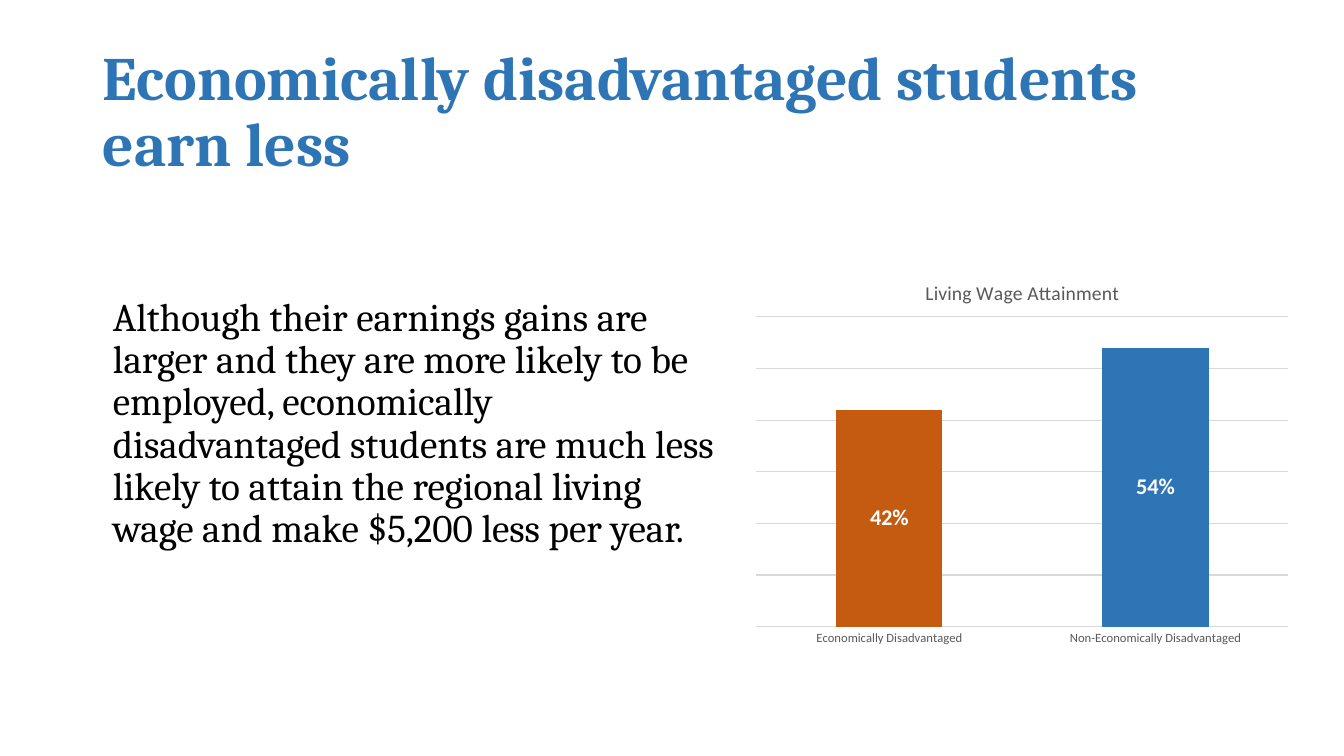
from dataclasses import dataclass
from typing import Any

from lxml import etree
from pptx import Presentation
from pptx.chart.data import CategoryChartData
from pptx.dml.color import RGBColor
from pptx.enum.chart import XL_CHART_TYPE, XL_LABEL_POSITION, XL_TICK_LABEL_POSITION, XL_TICK_MARK
from pptx.enum.text import MSO_ANCHOR, MSO_AUTO_SIZE, PP_ALIGN
from pptx.oxml.ns import qn
from pptx.util import Inches, Pt

STACKED = XL_CHART_TYPE.COLUMN_STACKED
CENTER = XL_LABEL_POSITION.CENTER
NO_TICK, NO_LABELS = XL_TICK_MARK.NONE, XL_TICK_LABEL_POSITION.NONE
TOP, MIDDLE = MSO_ANCHOR.TOP, MSO_ANCHOR.MIDDLE
NO_FIT, LEFT = MSO_AUTO_SIZE.NONE, PP_ALIGN.LEFT

BLUE, ORANGE, GREY, GRID = "2E75B6", "C55A11", "595959", "D9D9D9"


@dataclass
class Block:
    text: str
    box: tuple[float, float, float, float]
    anchor: Any
    font: dict[str, Any]
    space_before: float = 0


@dataclass
class Bar:
    category: str
    share: float
    color: str


TITLE = Block("Economically disadvantaged students earn less",
              (0.92, 0.4, 11.5, 1.45), MIDDLE,
              {"name": "Cambria", "size": Pt(44), "bold": True, "color": BLUE})
BODY = Block("Although their earnings gains are larger and they are more likely to be "
             "employed, economically disadvantaged students are much less likely to "
             "attain the regional living wage and make $5,200 less per year.",
             (1.02, 2.9, 6.26, 3.85), TOP,
             {"name": "Cambria", "size": Pt(28), "color": "000000"}, 10)
BARS = [Bar("Economically Disadvantaged", 0.42, ORANGE),
        Bar("Non-Economically Disadvantaged", 0.54, BLUE)]
CHART_BOX = (7.39, 2.6, 5.5, 3.89)
PLOT_LAYOUT = {"x": 0.02, "y": 0.14, "w": 0.96, "h": 0.79}


def rgb(color: str) -> RGBColor:
    return RGBColor.from_string(color)


def format_font(font: Any, values: dict[str, Any]) -> None:
    for name, value in values.items():
        if name == "color":
            font.color.rgb = rgb(value)
        else:
            setattr(font, name, value)


def format_line(line: Any) -> None:
    line.color.rgb = rgb(GRID)
    line.width = Pt(0.75)


def fill_placeholder(sp: Any, block: Block) -> None:
    sp.left, sp.top, sp.width, sp.height = map(Inches, block.box)
    tf = sp.text_frame
    tf.text = block.text
    tf.auto_size, tf.word_wrap, tf.vertical_anchor = NO_FIT, True, block.anchor
    p = tf.paragraphs[0]
    p.alignment, p.line_spacing, p.space_before = LEFT, 0.9, Pt(block.space_before)
    pPr = p._p.get_or_add_pPr()
    pPr.set("marL", "0")
    pPr.set("indent", "0")
    etree.SubElement(pPr, qn("a:buNone"))
    format_font(p.runs[0].font, block.font)


def place_plot(chart: Any) -> None:
    """Fix the inner plot area as fractions of the chart."""
    area = chart._chartSpace.chart.plotArea
    for old in area.findall(qn("c:layout")):
        area.remove(old)
    layout = etree.Element(qn("c:layout"))
    area.insert(0, layout)
    manual = etree.SubElement(layout, qn("c:manualLayout"))
    settings = {"layoutTarget": "inner", "xMode": "edge", "yMode": "edge", **PLOT_LAYOUT}
    for name, value in settings.items():
        etree.SubElement(manual, qn(f"c:{name}")).set("val", str(value))


def add_wage_chart(slide: Any) -> None:
    data = CategoryChartData(number_format="0%")
    data.categories = [bar.category for bar in BARS]
    data.add_series("Series 1", [bar.share for bar in BARS])
    chart = slide.shapes.add_chart(STACKED, *map(Inches, CHART_BOX), data).chart
    format_font(chart.font, {"name": "Calibri", "size": Pt(10), "color": "000000"})
    chart.has_legend = False
    chart.has_title = True
    tf = chart.chart_title.text_frame
    tf.text = "Living Wage Attainment"
    format_font(tf.paragraphs[0].runs[0].font,
                {"name": "Calibri", "size": Pt(14), "bold": False, "color": GREY})
    chart.chart_title.include_in_layout = False

    categories, values = chart.category_axis, chart.value_axis
    categories.major_tick_mark = NO_TICK
    format_font(categories.tick_labels.font,
                {"name": "Calibri", "size": Pt(9), "color": GREY})
    format_line(categories.format.line)
    values.minimum_scale, values.maximum_scale, values.major_unit = 0, 0.6, 0.1
    values.major_tick_mark, values.tick_label_position = NO_TICK, NO_LABELS
    values.format.line.fill.background()
    values.has_major_gridlines = True
    format_line(values.major_gridlines.format.line)

    plot = chart.plots[0]
    plot.gap_width, plot.overlap, plot.vary_by_categories = 150, 100, False
    series = plot.series[0]
    for i, bar in enumerate(BARS):
        fill = series.points[i].format.fill
        fill.solid()
        fill.fore_color.rgb = rgb(bar.color)
    labels = series.data_labels
    labels.show_value, labels.position = True, CENTER
    labels.number_format, labels.number_format_is_linked = "0%", False
    format_font(labels.font,
                {"name": "Calibri", "size": Pt(16), "bold": True, "color": "FFFFFF"})
    place_plot(chart)


def main() -> None:
    prs = Presentation()
    prs.slide_width, prs.slide_height = Inches(13.33), Inches(7.5)
    slide = prs.slides.add_slide(prs.slide_layouts[1])
    for sp, block in zip(slide.placeholders, (TITLE, BODY)):
        fill_placeholder(sp, block)
    add_wage_chart(slide)
    prs.save("out.pptx")


if __name__ == "__main__":
    main()
